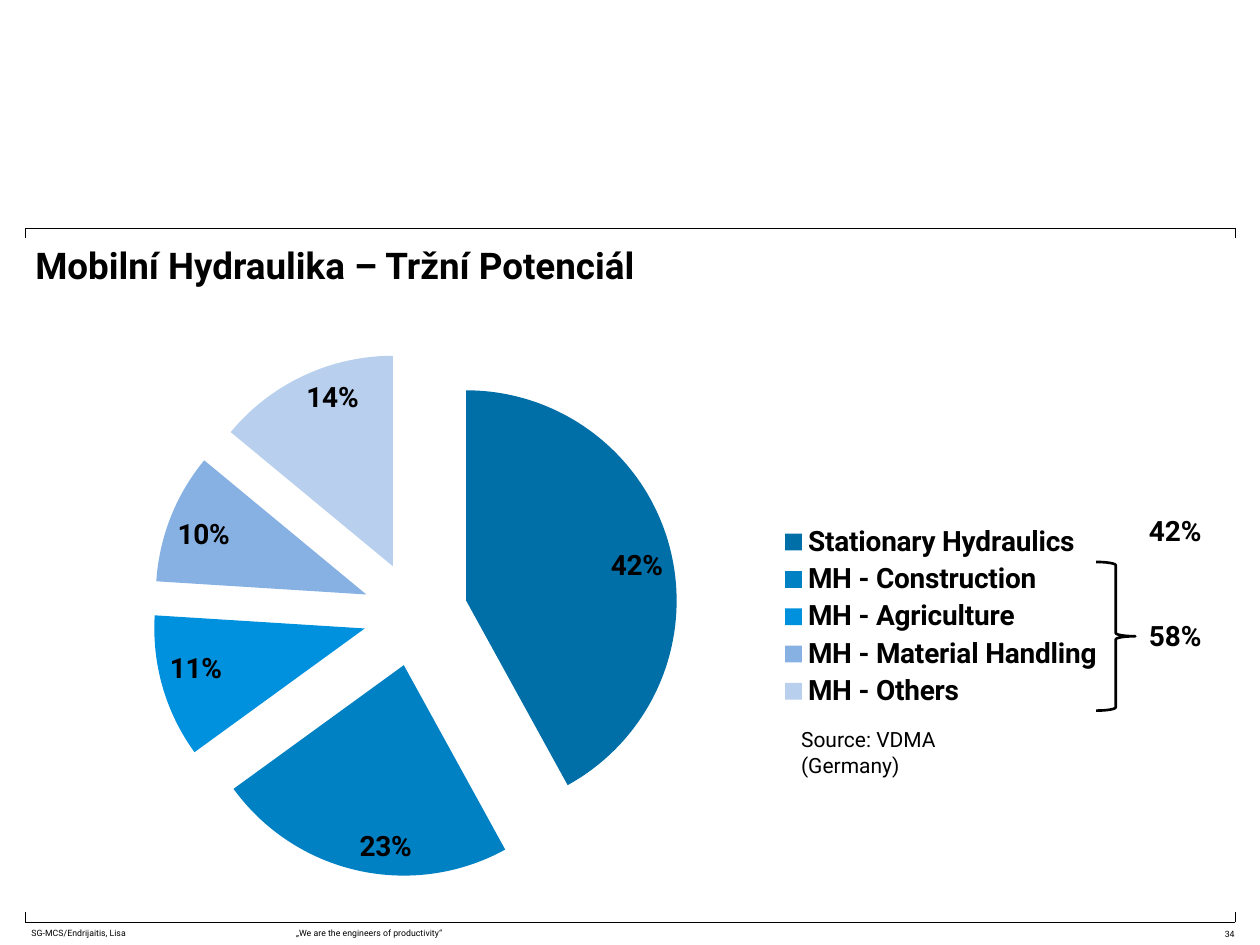
from dataclasses import dataclass

from lxml import etree
from pptx import Presentation
from pptx.chart.data import CategoryChartData
from pptx.dml.color import RGBColor
from pptx.enum.chart import XL_CHART_TYPE, XL_LABEL_POSITION, XL_LEGEND_POSITION
from pptx.enum.shapes import MSO_CONNECTOR, MSO_SHAPE
from pptx.enum.text import MSO_ANCHOR, PP_ALIGN
from pptx.oxml import parse_xml
from pptx.oxml.ns import nsdecls, qn
from pptx.util import Inches, Pt

PIE = XL_CHART_TYPE.PIE_EXPLODED
INSIDE_END = XL_LABEL_POSITION.INSIDE_END
LEGEND_RIGHT = XL_LEGEND_POSITION.RIGHT
STRAIGHT = MSO_CONNECTOR.STRAIGHT
BRACE = MSO_SHAPE.RIGHT_BRACE
TOP, MIDDLE = MSO_ANCHOR.TOP, MSO_ANCHOR.MIDDLE
LEFT, RIGHT = PP_ALIGN.LEFT, PP_ALIGN.RIGHT

WIDTH, HEIGHT = Inches(10), Inches(7.5)
COLS, ROWS = 100, 75
NO_INSETS = (0, 0, 0, 0)
FOOTER_INSETS = (0.04, 0, 0, 0)
BOX_INSETS = (0.1, 0.05, 0.1, 0.05)


@dataclass(frozen=True)
class Theme:
    font: str = "Roboto"
    ink: RGBColor = RGBColor(0, 0, 0)
    slices: tuple = ("006FA8", "0081C4", "0091DE", "87B1E3", "B8CFED")
    title: float = 21
    label: float = 16
    source: float = 12
    footer: float = 5
    frame: float = 0.25
    brace: float = 1.5


THEME = Theme()

MARKET = {
    "Stationary Hydraulics": 0.42,
    "MH - Construction": 0.23,
    "MH - Agriculture": 0.11,
    "MH - Material Handling": 0.10,
    "MH - Others": 0.14,
}


def col(n):
    return round(WIDTH * n / COLS)


def row(n):
    return round(HEIGHT * n / ROWS)


def area(x, y, w, h):
    return col(x), row(y), col(w), row(h)


def style_font(font, size, bold=False):
    for name, value in {"name": THEME.font, "size": Pt(size), "bold": bold}.items():
        setattr(font, name, value)
    font.color.rgb = THEME.ink


def set_text(shape, text, size, bold=False, align=LEFT, anchor=TOP,
             insets=BOX_INSETS, wrap=False):
    tf = shape.text_frame
    sides = ("margin_left", "margin_top", "margin_right", "margin_bottom")
    for side, inset in zip(sides, insets):
        setattr(tf, side, Inches(inset))
    tf.word_wrap, tf.vertical_anchor = wrap, anchor
    p = tf.paragraphs[0]
    p.alignment = align
    r = p.add_run()
    r.text = text
    style_font(r.font, size, bold)


def add_text(s, place, text, size, **options):
    set_text(s.shapes.add_textbox(*area(*place)), text, size, **options)


def add_title(s, place, text):
    title = s.shapes.title
    title.left, title.top, title.width, title.height = area(*place)
    set_text(title, text, THEME.title, bold=True, anchor=MIDDLE, insets=NO_INSETS)


def add_line(s, x1, y1, x2, y2):
    line = s.shapes.add_connector(STRAIGHT, col(x1), row(y1), col(x2), row(y2))
    line.line.color.rgb = THEME.ink
    line.line.width = Pt(THEME.frame)
    etree.SubElement(line._element.spPr, qn("a:effectLst"))


def add_frame_edge(s, y, tick):
    """Horizontal rule with a short tick at either end."""
    left, right = 2, 98
    for x in (left, right):
        add_line(s, x, y, x, y + tick)
    add_line(s, left, y, right, y)


def add_brace(s, place):
    brace = s.shapes.add_shape(BRACE, *area(*place))
    brace.shadow.inherit = False
    brace.fill.background()
    brace.line.color.rgb = THEME.ink
    brace.line.width = Pt(THEME.brace)


def manual_layout(x, y, w, h, inner=False):
    """Layout element in shares of the chart's size."""
    target = '<c:layoutTarget val="inner"/>' if inner else ""
    values = {"x": x, "y": y, "w": w, "h": h}
    modes = "".join(f'<c:{k}Mode val="edge"/>' for k in "xy")
    sizes = "".join(f'<c:{k} val="{v}"/>' for k, v in values.items())
    return parse_xml(f"<c:layout {nsdecls('c')}><c:manualLayout>{target}"
                     f"{modes}{sizes}</c:manualLayout></c:layout>")


def add_pie(s, place):
    data = CategoryChartData(number_format="0%")
    data.categories = list(MARKET)
    data.add_series("Series 1", list(MARKET.values()))
    chart = s.shapes.add_chart(PIE, *area(*place), data).chart
    style_font(chart.font, THEME.label, bold=True)
    chart.has_title = False

    # Slices and their labels
    plot = chart.plots[0]
    plot.vary_by_categories = True
    series = plot.series[0]
    for i, colour in enumerate(THEME.slices):
        fill = series.points[i].format.fill
        fill.solid()
        fill.fore_color.rgb = RGBColor.from_string(colour)
    explosion = series._element.find(qn("c:explosion"))
    explosion.set("val", "25")
    plot.has_data_labels = True
    labels = plot.data_labels
    settings = {"show_value": True, "show_percentage": False, "position": INSIDE_END,
                "number_format": "0%", "number_format_is_linked": False}
    for name, value in settings.items():
        setattr(labels, name, value)
    style_font(labels.font, THEME.label, bold=True)

    # Legend and positions inside the chart
    chart.has_legend = True
    legend = chart.legend
    legend.position, legend.include_in_layout = LEGEND_RIGHT, False
    style_font(legend.font, THEME.label, bold=True)
    plot_area = chart._chartSpace.chart.plotArea
    for old in plot_area.findall(qn("c:layout")):
        plot_area.remove(old)
    plot_area.insert(0, manual_layout(0.09, 0.03, 0.5, 0.93, inner=True))
    legend_xml = legend._element
    for old in legend_xml.findall(qn("c:layout")):
        legend_xml.remove(old)
    legend_xml.find(qn("c:legendPos")).addnext(manual_layout(0.68, 0.33, 0.31, 0.34))


def main():
    prs = Presentation()
    prs.slide_width, prs.slide_height = WIDTH, HEIGHT
    s = prs.slides.add_slide(prs.slide_layouts[5])

    # Frame, footer and title
    add_frame_edge(s, 18.1, 0.8)
    add_frame_edge(s, 73.2, -0.8)
    footers = {2.1: "SG-MCS/Endrijaitis, Lisa",
               23.1: "„We are the engineers of productivity“"}
    for x, text in footers.items():
        add_text(s, (x, 73.6, 15.7, 1), text, THEME.footer,
                 insets=FOOTER_INSETS, wrap=True)
    add_text(s, (96.6, 73.6, 1.4, 1), "34", THEME.footer, align=RIGHT,
             anchor=MIDDLE, insets=NO_INSETS)
    add_title(s, (2.8, 19.1, 94.4, 3.9), "Mobilní Hydraulika – Tržní Potenciál")

    # Market shares with source and totals
    add_pie(s, (4.3, 26.5, 84.3, 44.9))
    add_text(s, (62.6, 57.2, 20, 5), "Source: VDMA (Germany)", THEME.source, wrap=True)
    add_brace(s, (87, 44.6, 3.1, 11.8))
    for y, total in ((48.6, "58%"), (40.3, "42%")):
        add_text(s, (90.2, y, 6.3, 3.7), total, THEME.label, bold=True)

    prs.save("out.pptx")


if __name__ == "__main__":
    main()
